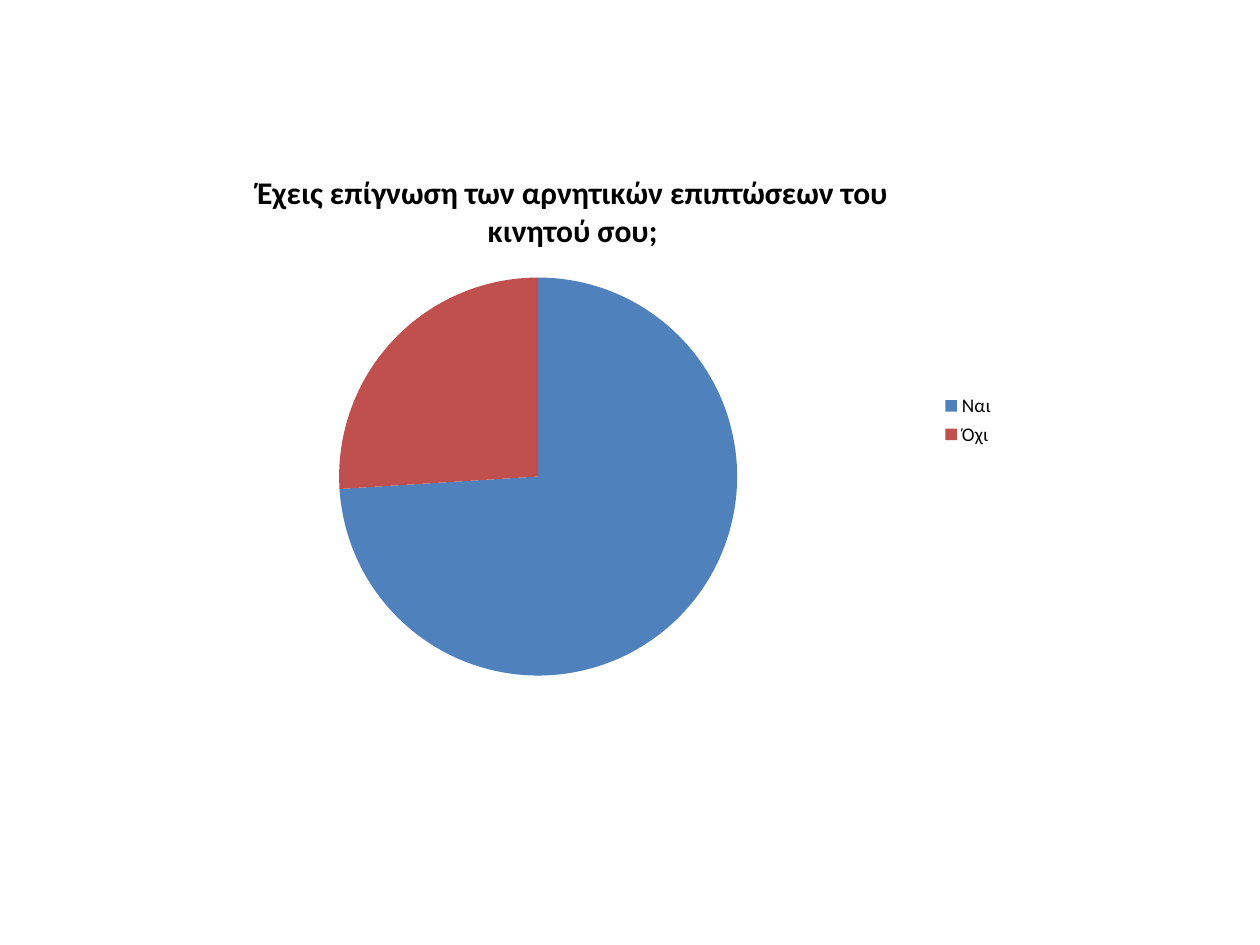
from pptx import Presentation
from pptx.chart.data import CategoryChartData
from pptx.dml.color import RGBColor
from pptx.enum.chart import XL_CHART_TYPE as ChartType, XL_LEGEND_POSITION as LegendPosition
from pptx.util import Inches, Pt

BLACK = RGBColor(0x00, 0x00, 0x00)
BLUE = RGBColor(0x4F, 0x81, 0xBD)
RED = RGBColor(0xC0, 0x50, 0x4D)
FONT = "Calibri"
QUESTION = "Έχεις επίγνωση των αρνητικών επιπτώσεων του κινητού σου;"
ANSWERS = [("Ναι", 74, BLUE), ("Όχι", 26, RED)]


def style_font(font, size, bold=False):
    font.name = FONT
    font.size = Pt(size)
    font.bold = bold
    font.color.rgb = BLACK


def add_title(chart, question):
    chart.has_title = True
    title_frame = chart.chart_title.text_frame
    title_frame.text = question
    style_font(title_frame.paragraphs[0].runs[0].font, 18, bold=True)
    chart.chart_title.include_in_layout = False


def add_legend(chart):
    chart.has_legend = True
    chart.legend.position = LegendPosition.RIGHT
    chart.legend.include_in_layout = False
    style_font(chart.legend.font, 11)


def add_answer_pie(slide, question, answers, left, top, width, height):
    survey = CategoryChartData()
    survey.categories = [answer for answer, _, _ in answers]
    survey.add_series(question, [share for _, share, _ in answers])
    chart = slide.shapes.add_chart(
        ChartType.PIE, left, top, width, height, survey
    ).chart
    style_font(chart.font, 10)
    add_title(chart, question)
    add_legend(chart)

    pie = chart.plots[0]
    pie.vary_by_categories = True
    for index, (_, _, color) in enumerate(answers):
        slice_fill = pie.series[0].points[index].format.fill
        slice_fill.solid()
        slice_fill.fore_color.rgb = color


def main():
    deck = Presentation()
    deck.slide_width = Inches(10)
    deck.slide_height = Inches(7.5)
    slide = deck.slides.add_slide(deck.slide_layouts[6])
    add_answer_pie(
        slide, QUESTION, ANSWERS,
        Inches(1.09), Inches(1.17), Inches(6.91), Inches(4.33),
    )
    deck.save("out.pptx")


if __name__ == "__main__":
    main()
